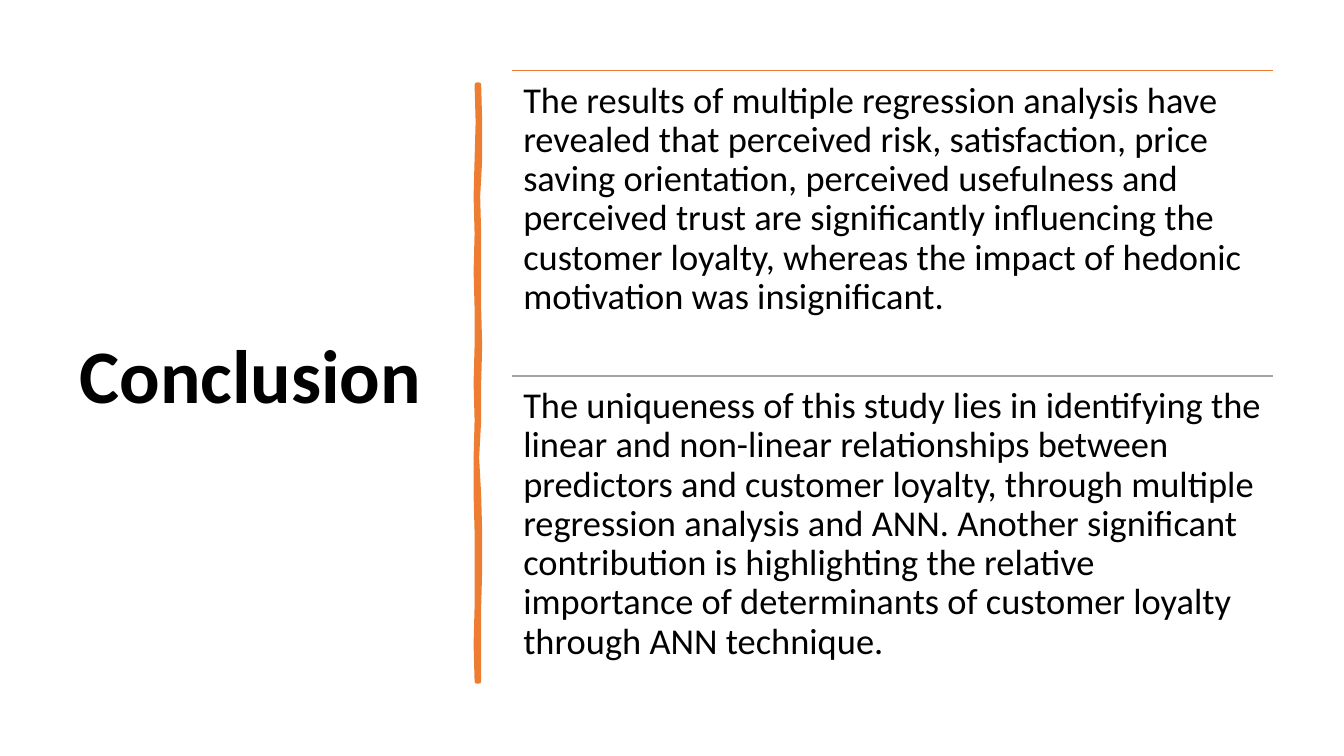
from pptx import Presentation
from pptx.dml.color import RGBColor
from pptx.enum.shapes import MSO_CONNECTOR as CONN
from pptx.enum.text import MSO_ANCHOR as ANCHOR, PP_ALIGN as ALIGN
from pptx.oxml.ns import qn
from pptx.util import Inches, Pt
from lxml import etree

BLACK = RGBColor(0x00, 0x00, 0x00)
ORANGE = RGBColor(0xED, 0x7D, 0x31)
GRAY = RGBColor(0xA5, 0xA5, 0xA5)

TOP = 0.7
BODY_LEFT, BODY_W, ROW_H = 5.08, 7.55, 3.03
BRUSH_TOP, BRUSH_BOTTOM = 0.84, 6.76

prs = Presentation()
prs.slide_width, prs.slide_height = Inches(13.33), Inches(7.5)
s = prs.slides.add_slide(prs.slide_layouts[6])


def add_text(text, x, y, w, h, size, bold=False, anchor=ANCHOR.TOP,
             inset_x=0.11, inset_y=0.11, after=0):
    tf = s.shapes.add_textbox(Inches(x), Inches(y), Inches(w), Inches(h)).text_frame
    tf.word_wrap = True
    tf.vertical_anchor = anchor
    tf.margin_left = tf.margin_right = Inches(inset_x)
    tf.margin_top = tf.margin_bottom = Inches(inset_y)
    p = tf.paragraphs[0]
    p.alignment = ALIGN.LEFT
    p.line_spacing = 0.9
    p.space_after = Pt(after)
    r = p.add_run()
    r.text = text
    r.font.name, r.font.size, r.font.bold = "Calibri", Pt(size), bold
    r.font.color.rgb = BLACK


add_text("Conclusion", 0.69, TOP, 3.74, 6.11, 54, bold=True,
         anchor=ANCHOR.MIDDLE, inset_x=0.1, inset_y=0.05)

# Hand-drawn divider: both edges waver at evenly spaced heights
right_edge = [4.75, 4.76, 4.76, 4.74, 4.75, 4.75, 4.75, 4.76, 4.75,
              4.75, 4.73, 4.75, 4.76, 4.76, 4.75, 4.75, 4.75]
left_edge = [4.73, 4.74, 4.73, 4.72, 4.73, 4.72, 4.73, 4.73, 4.72,
             4.73, 4.72, 4.72, 4.73, 4.73, 4.73, 4.72, 4.73]
step = (BRUSH_BOTTOM - BRUSH_TOP) / (len(right_edge) - 1)
down = [(x, BRUSH_TOP + i * step) for i, x in enumerate(right_edge)]
up = [(x, BRUSH_TOP + i * step) for i, x in enumerate(left_edge)][::-1]
outline = [(Inches(x), Inches(y)) for x, y in down + up]
builder = s.shapes.build_freeform(*outline[0])
builder.add_line_segments(outline[1:], close=True)
brush = builder.convert_to_shape()
brush.shadow.inherit = False
brush.fill.solid()
brush.fill.fore_color.rgb = ORANGE
brush.line.color.rgb = ORANGE
brush.line.width = Pt(3.25)
etree.SubElement(brush.line._get_or_add_ln(), qn("a:round"))

findings = [
    (ORANGE, "The results of multiple regression analysis have revealed that perceived risk, "
             "satisfaction, price saving orientation, perceived usefulness and perceived trust "
             "are significantly influencing the customer loyalty, whereas the impact of hedonic "
             "motivation was insignificant."),
    (GRAY, "The uniqueness of this study lies in identifying the linear and non-linear "
           "relationships between predictors and customer loyalty, through multiple regression "
           "analysis and ANN. Another significant contribution is highlighting the relative "
           "importance of determinants of customer loyalty through ANN technique."),
]
for row, (color, text) in enumerate(findings):
    y = TOP + row * ROW_H
    rule = s.shapes.add_connector(CONN.STRAIGHT, Inches(BODY_LEFT), Inches(y),
                                  Inches(BODY_LEFT + BODY_W), Inches(y))
    rule.line.color.rgb = color
    rule.line.width = Pt(1)
    etree.SubElement(rule._element.spPr, qn("a:effectLst"))
    add_text(text, BODY_LEFT, y, BODY_W, ROW_H, 26, after=9)

prs.save("out.pptx")
